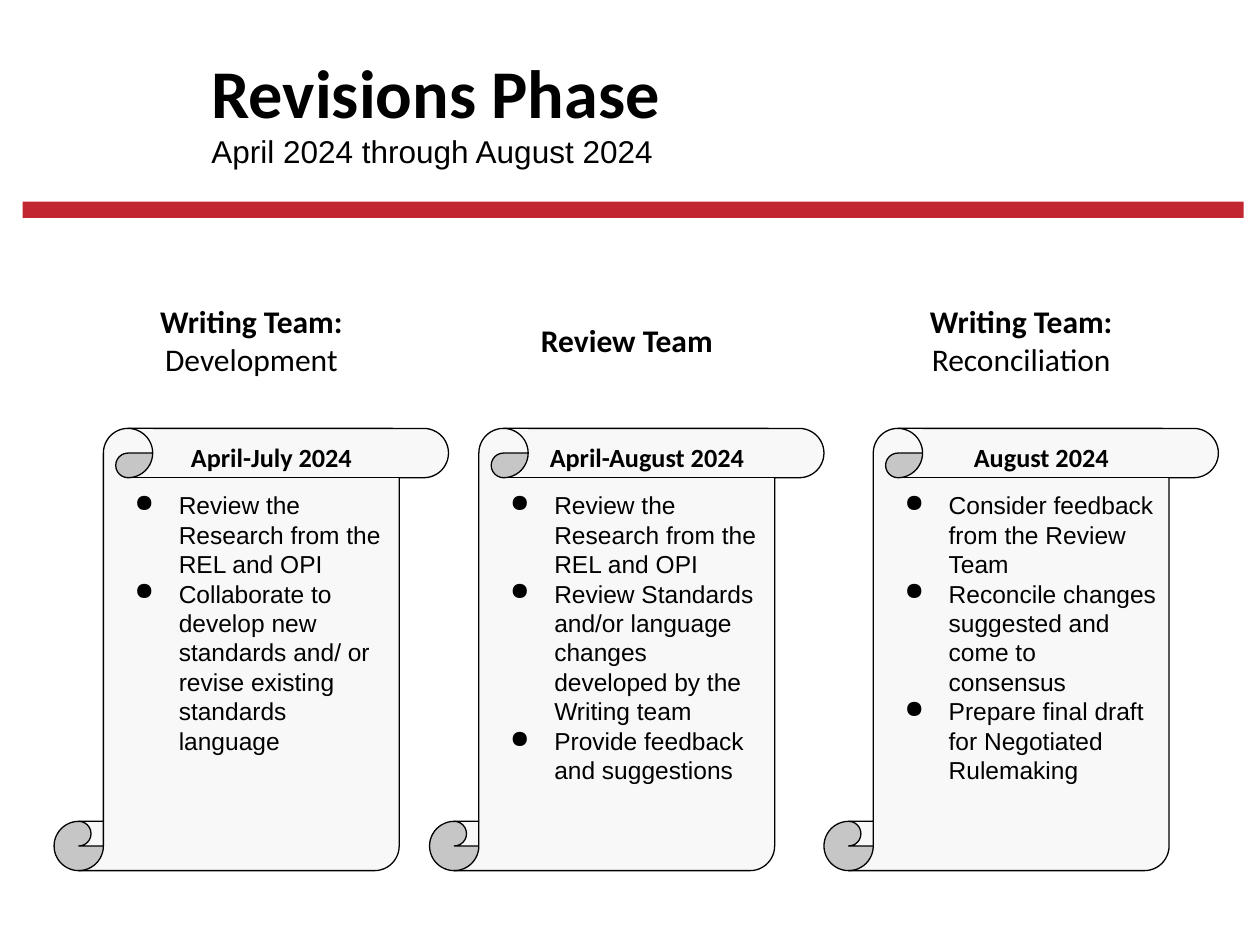
from lxml import etree
from pptx import Presentation
from pptx.dml.color import RGBColor
from pptx.enum.shapes import MSO_SHAPE
from pptx.enum.text import MSO_ANCHOR, PP_ALIGN
from pptx.oxml.ns import qn
from pptx.util import Inches, Pt

RECT, SCROLL = MSO_SHAPE.RECTANGLE, MSO_SHAPE.VERTICAL_SCROLL
TOP, MIDDLE = MSO_ANCHOR.TOP, MSO_ANCHOR.MIDDLE
LEFT, CENTER = PP_ALIGN.LEFT, PP_ALIGN.CENTER

BLACK, RED, PAPER = "000000", "C12730", "F8F8F8"
TITLE = dict(name="Calibri", size=Pt(39), bold=True)
SUBTITLE = dict(name="Arial", size=Pt(18), bold=False)
TEAM = dict(name="Calibri", size=Pt(18), bold=True)
TASK = dict(TEAM, bold=False)
DATES = dict(name="Calibri", size=Pt(15), bold=True)
BULLET = dict(name="Arial", size=Pt(14), bold=False)

# scroll left, team heading, dates, bullets
PHASES = [
    (0.43, [("Writing Team: ", TEAM), ("Development", TASK)], "April-July 2024",
     ["Review the Research from the REL and OPI",
      "Collaborate to develop new standards and/ or revise existing standards language"]),
    (3.41, [("Review Team", TEAM)], "April-August 2024",
     ["Review the Research from the REL and OPI",
      "Review Standards and/or language changes developed by the Writing team",
      "Provide feedback and suggestions"]),
    (6.54, [("Writing Team: ", TEAM), ("Reconciliation", TASK)], "August 2024",
     ["Consider feedback from the Review Team",
      "Reconcile changes suggested and come to consensus",
      "Prepare final draft for Negotiated Rulemaking"]),
]


def rgb(value):
    return RGBColor.from_string(value)


def add_bullet(p):
    pPr = p._p.get_or_add_pPr()
    pPr.set("marL", str(Inches(0.5)))
    pPr.set("indent", str(-Inches(0.35)))
    color = etree.SubElement(pPr, qn("a:buClr"))
    etree.SubElement(color, qn("a:srgbClr"), val=BLACK)
    etree.SubElement(pPr, qn("a:buChar"), char="●")


def write(shape, paragraphs, align=LEFT, anchor=TOP, inset=0.1, bullets=False):
    """Fill a shape with paragraphs, each a list of (text, format) runs."""
    tf = shape.text_frame
    tf.word_wrap = True
    tf.vertical_anchor = anchor
    tf.margin_left = tf.margin_right = Inches(0.1)
    tf.margin_top = tf.margin_bottom = Inches(inset)
    for i, runs in enumerate(paragraphs):
        p = tf.paragraphs[0] if i == 0 else tf.add_paragraph()
        p.alignment = align
        if bullets:
            add_bullet(p)
        for text, fmt in runs:
            r = p.add_run()
            r.text = text
            r.font.color.rgb = rgb(BLACK)
            for key, value in fmt.items():
                setattr(r.font, key, value)


def add_shape(s, kind, box, fill):
    sp = s.shapes.add_shape(kind, *map(Inches, box))
    sp.shadow.inherit = False
    sp.fill.solid()
    sp.fill.fore_color.rgb = rgb(fill)
    sp.line.fill.background()
    return sp


def add_text(s, box, paragraphs, **layout):
    write(s.shapes.add_textbox(*map(Inches, box)), paragraphs, **layout)


def add_phase(s, left, team, dates, tasks):
    add_text(s, (left + 0.52, 2.3, 2.09, 0.8), [team], align=CENTER, anchor=MIDDLE)
    scroll = add_shape(s, SCROLL, (left, 3.4, 3.13, 3.51), PAPER)
    scroll.line.color.rgb = rgb(BLACK)
    scroll.line.width = Pt(0.75)
    write(scroll, [[(task, BULLET)] for task in tasks], bullets=True)
    add_text(s, (left + 0.81, 3.4, 1.83, 0.45), [[(dates, DATES)]],
             align=CENTER, anchor=MIDDLE)


def main():
    prs = Presentation()
    prs.slide_width, prs.slide_height = Inches(10), Inches(7.5)
    s = prs.slides.add_slide(prs.slide_layouts[6])
    add_shape(s, RECT, (0.18, 1.6, 9.69, 0.13), RED)
    add_text(s, (1.58, 0.37, 4.21, 1.41),
             [[("Revisions Phase", TITLE)],
              [("April 2024 through August 2024", SUBTITLE)]], inset=0.03)
    for phase in PHASES:
        add_phase(s, *phase)
    prs.save("out.pptx")


if __name__ == "__main__":
    main()
